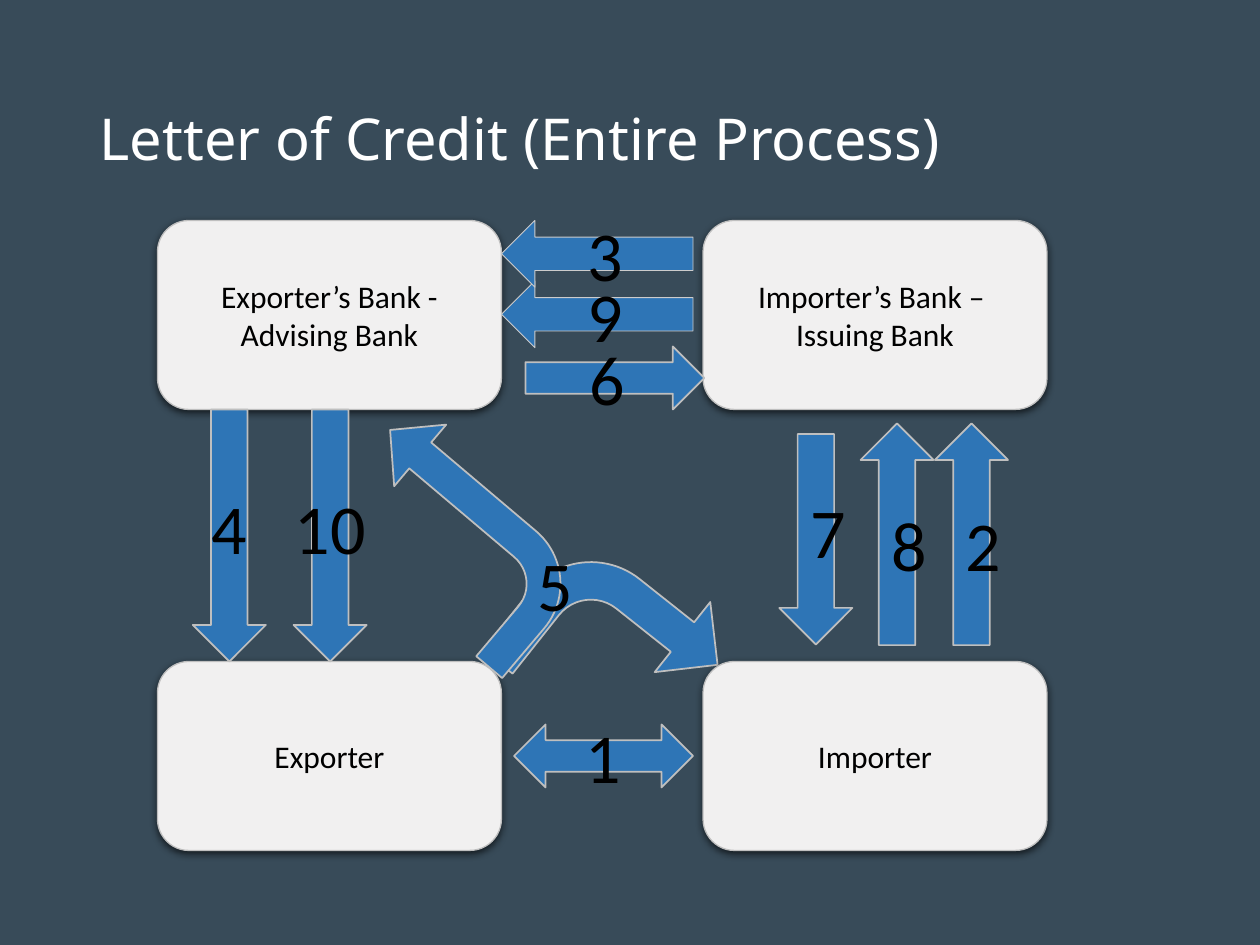
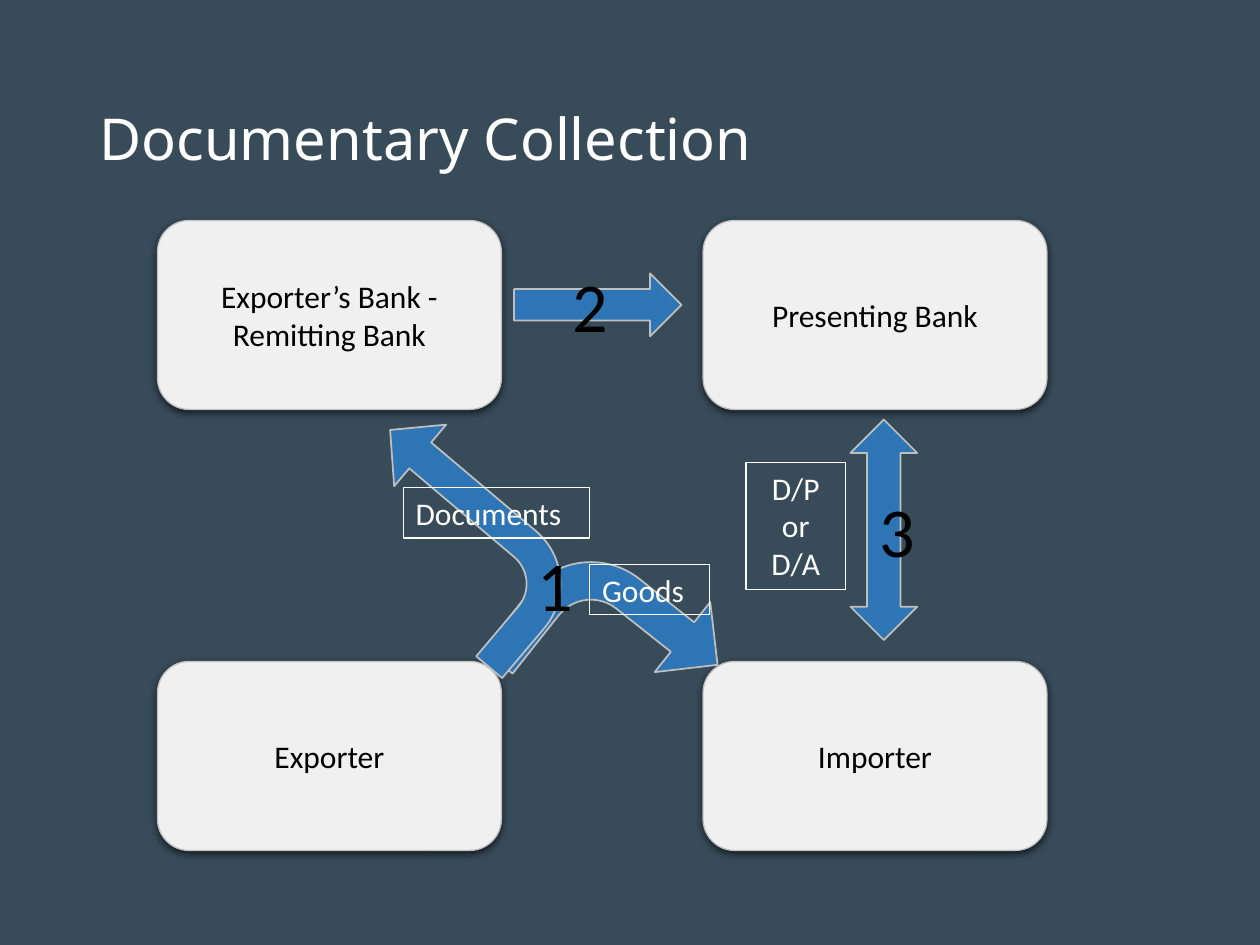
import pptx
import pptx.util
import pptx.dml.color
import pptx.enum.shapes
import pptx.enum.text
import pptx.oxml
import pptx.oxml.ns

Inches = pptx.util.Inches
Kind = pptx.enum.shapes.MSO_SHAPE
Align = pptx.enum.text.PP_ALIGN
Anchor = pptx.enum.text.MSO_ANCHOR
Fit = pptx.enum.text.MSO_AUTO_SIZE


class Theme:
    back, panel, arrow = "384B59", "F1F0F0", "2E75B6"
    edge, pale, ink, light = "BFBFBF", "CCCCCC", "000000", "FFFFFF"
    head_font, font = "Noto Sans", "Calibri"
    head, body, step = 33, 18, 40


TITLE = (0.69, 0.4, 8.62, 1.45)
COLS, ROWS, SIZE = (1.25, 5.58), (1.75, 5.25), (2.73, 1.5)
TURNS = {90: "vert270", 270: "vert"}
GOODS = ((4.11, 4.37, 1.53, 1.42), 38.4, False, (0.21, 0.25, 0.25, 0.438))
PAPERS = ((2.67, 3.65, 1.95, 1.25), 40.2, True, (0.215, 0.256, 0.25, 0.438))
FORK = (4.17, 4.25, 0.51, 0.77)

SLIDES = [
    {
        "title": "Letter of Credit (Entire Process)",
        "banks": ("Exporter’s Bank - Advising Bank", "Importer’s Bank – \vIssuing Bank"),
        "under": [GOODS],
        "arrows": [
            ("2", Kind.RIGHT_ARROW, (6.83, 3.95, 1.76, 0.58), {"turn": 270}),
            ("9", Kind.LEFT_ARROW, (3.98, 2.23, 1.52, 0.53), {"edge": Theme.pale, "width": 0.5}),
            ("10", Kind.RIGHT_ARROW, (1.62, 3.96, 2, 0.58), {"turn": 90, "wrap": False}),
            ("8", Kind.RIGHT_ARROW, (6.24, 3.95, 1.76, 0.58), {"turn": 270}),
            ("1", Kind.LEFT_RIGHT_ARROW, (4.08, 5.75, 1.42, 0.5), {}),
            ("3", Kind.LEFT_ARROW, (3.98, 1.75, 1.52, 0.53), {"edge": Theme.pale, "width": 0.5}),
            ("4", Kind.RIGHT_ARROW, (0.82, 3.96, 2, 0.58), {"turn": 90, "wrap": False}),
            ("6", Kind.RIGHT_ARROW, (4.17, 2.75, 1.42, 0.5), {}),
            ("7", Kind.RIGHT_ARROW, (5.64, 3.99, 1.67, 0.58), {"turn": 90}),
        ],
        "over": [PAPERS],
        "fork": "5",
        "labels": [],
    },
    {
        "title": "Documentary Collection",
        "banks": ("Exporter’s Bank - Remitting Bank", "Presenting Bank"),
        "under": [],
        "arrows": [
            ("2", Kind.RIGHT_ARROW, (4.08, 2.17, 1.33, 0.5), {}),
            ("3", Kind.UP_DOWN_ARROW, (6.75, 3.33, 0.53, 1.75), {}),
        ],
        "over": [GOODS, PAPERS],
        "fork": "1",
        "labels": [
            ("D/P\nor\nD/A", (5.92, 3.67, 0.79, 1.01), Align.CENTER, True),
            ("Documents", (3.2, 3.87, 1.48, 0.4), Align.LEFT, False),
            ("Goods", (4.68, 4.48, 0.95, 0.4), Align.LEFT, False),
        ],
    },
]

SHADOW = (
    '<a:effectLst %s><a:outerShdw blurRad="57150" dist="19050" dir="5400000" '
    'algn="ctr" rotWithShape="0"><a:srgbClr val="%s"><a:alpha val="63000"/>'
    "</a:srgbClr></a:outerShdw></a:effectLst>"
) % (pptx.oxml.ns.nsdecls("a"), Theme.ink)


def rgb(code):
    return pptx.dml.color.RGBColor.from_string(code)


def apply(item, values):
    for name, value in values.items():
        setattr(item, name, value)


def outline(shape, color, width):
    shape.line.color.rgb = rgb(color)
    shape.line.width = pptx.util.Pt(width)


def write(shape, text, size, color=Theme.ink, font=Theme.font, align=Align.CENTER,
          space=None, **frame):
    body = shape.text_frame
    body.text = text
    apply(body, {"word_wrap": True, "vertical_anchor": Anchor.MIDDLE, **frame})
    for para in body.paragraphs:
        apply(para, {"alignment": align, "line_spacing": space})
        for run in para.runs:
            apply(run.font, {"name": font, "size": pptx.util.Pt(size)})
            run.font.color.rgb = rgb(color)


def draw(slide, kind, place, fill, edge=Theme.edge, width=1):
    shape = slide.shapes.add_shape(kind, *map(Inches, place))
    shape.shadow.inherit = False
    shape.fill.solid()
    shape.fill.fore_color.rgb = rgb(fill)
    outline(shape, edge, width)
    return shape


def add_panel(slide, text, col, row):
    shape = draw(slide, Kind.ROUNDED_RECTANGLE, (col, row, *SIZE), Theme.panel, width=0.75)
    props = shape._element.spPr
    props.remove(props.find(pptx.oxml.ns.qn("a:effectLst")))
    props.append(pptx.oxml.parse_xml(SHADOW))
    write(shape, text, Theme.body)


def add_arrow(slide, text, kind, place, turn=0, wrap=True, **line):
    shape = draw(slide, kind, place, Theme.arrow, **line)
    write(shape, text, Theme.step, word_wrap=wrap)
    if turn:
        shape.rotation = turn
        body = shape._element.txBody.find(pptx.oxml.ns.qn("a:bodyPr"))
        body.set("vert", TURNS[turn])


def add_bend(slide, place, turn, flip, bends):
    shape = draw(slide, Kind.BENT_ARROW, place, Theme.arrow)
    shape.rotation = turn
    if flip:
        shape._element.spPr.xfrm.set("flipH", "1")
    for index, bend in enumerate(bends):
        shape.adjustments[index] = bend


def add_label(slide, text, place, size, color, align=Align.LEFT, wrap=False):
    box = slide.shapes.add_textbox(*map(Inches, place))
    write(box, text, size, color, align=align, word_wrap=wrap,
          vertical_anchor=Anchor.TOP, auto_size=Fit.SHAPE_TO_FIT_TEXT)
    return box


def add_slide(deck, data):
    slide = deck.slides.add_slide(deck.slide_layouts[5])
    title = slide.shapes.title
    apply(title, dict(zip(("left", "top", "width", "height"), map(Inches, TITLE))))
    write(title, data["title"], Theme.head, Theme.light, Theme.head_font,
          Align.LEFT, 0.9, auto_size=Fit.NONE)
    for bend in data["under"]:
        add_bend(slide, *bend)
    for row, names in zip(ROWS, (data["banks"], ("Exporter", "Importer"))):
        for col, name in zip(COLS, names):
            add_panel(slide, name, col, row)
    for text, kind, place, style in data["arrows"]:
        add_arrow(slide, text, kind, place, **style)
    for bend in data["over"]:
        add_bend(slide, *bend)
    add_label(slide, data["fork"], FORK, Theme.step, Theme.ink)
    for text, place, align, wrap in data["labels"]:
        box = add_label(slide, text, place, Theme.body, Theme.light, align, wrap)
        outline(box, Theme.light, 0.75)


def main():
    deck = pptx.Presentation()
    apply(deck, {"slide_width": Inches(10), "slide_height": Inches(7.5)})
    fill = deck.slide_master.background.fill
    fill.solid()
    fill.fore_color.rgb = rgb(Theme.back)
    for data in SLIDES:
        add_slide(deck, data)
    deck.save("out.pptx")


if __name__ == "__main__":
    main()
